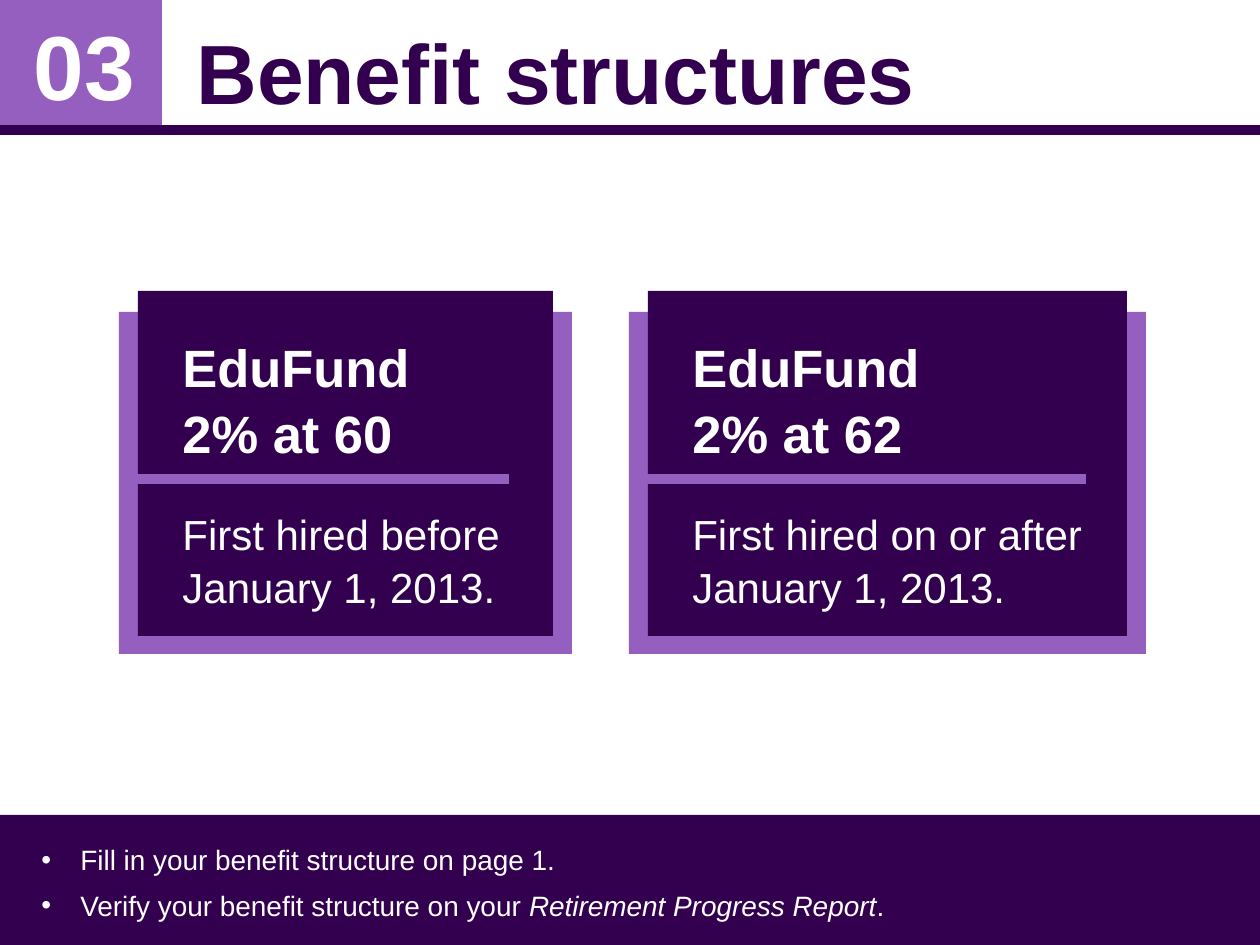
from dataclasses import dataclass

from lxml import etree
from pptx import Presentation
from pptx.dml.color import RGBColor
from pptx.enum.shapes import MSO_CONNECTOR, MSO_SHAPE
from pptx.enum.text import MSO_ANCHOR, PP_ALIGN
from pptx.oxml.ns import qn
from pptx.util import Pt

RECTANGLE = MSO_SHAPE.RECTANGLE
STRAIGHT = MSO_CONNECTOR.STRAIGHT
TOP, MIDDLE = MSO_ANCHOR.TOP, MSO_ANCHOR.MIDDLE
LEFT, CENTER = PP_ALIGN.LEFT, PP_ALIGN.CENTER

EMU_PER_PX = 914400 / 126
WIDTH, HEIGHT = 1260, 945
HEADER_HEIGHT = 130
FOOTER_TOP = 815
DARK, LIGHT, WHITE = "32004F", "945FBF", "FFFFFF"


def px(length):
    return round(length * EMU_PER_PX)


def color(value):
    return RGBColor.from_string(value)


@dataclass
class SlideBuilder:
    page: object
    font_name: str = "Arial"

    def rectangle(self, left, top, width, height, fill):
        box = self.page.shapes.add_shape(
            RECTANGLE, px(left), px(top), px(width), px(height))
        box.shadow.inherit = False
        box.fill.solid()
        box.fill.fore_color.rgb = color(fill)
        box.line.fill.background()

    def rule(self, left, right, y):
        line = self.page.shapes.add_connector(
            STRAIGHT, px(left), px(y), px(right), px(y))
        etree.SubElement(line._element.spPr, qn("a:effectLst"))
        return line

    def bar(self, left, right, y, stroke):
        line = self.rule(left, right, y)
        line.line.width = Pt(6)
        line.line.color.rgb = color(stroke)

    def bullet(self, para):
        properties = para._p.get_or_add_pPr()
        properties.set("marL", str(px(39)))
        properties.set("indent", str(px(-39)))
        etree.SubElement(properties, qn("a:buFont")).set("typeface", self.font_name)
        etree.SubElement(properties, qn("a:buChar")).set("char", "•")

    def text(self, left, top, width, height, paragraphs, anchor=TOP,
             fill=WHITE, bulleted=False, **layout):
        box = self.page.shapes.add_textbox(
            px(left), px(top), px(width), px(height))
        frame = box.text_frame
        frame.word_wrap = True
        frame.vertical_anchor = anchor
        for index, (spans, style) in enumerate(paragraphs):
            para = frame.paragraphs[0] if index == 0 else frame.add_paragraph()
            if bulleted:
                self.bullet(para)
            for name, value in layout.items():
                setattr(para, name, value)
            for position, line in enumerate(spans):
                if position and not bulleted:
                    para.add_line_break()
                words, extra = line if isinstance(line, tuple) else (line, {})
                span = para.add_run()
                span.text = words
                span.font.color.rgb = color(fill)
                values = {"name": self.font_name, **style, **extra}
                for name, value in values.items():
                    setattr(span.font, name, value)

    def card(self, left, width, rule_right, text_width, heading, detail):
        self.rectangle(left, 312, width, 342, LIGHT)
        self.rectangle(left + 19, 291, width - 38, 345, DARK)
        self.text(left + 51, 326, text_width, 285, [
            (heading, {"size": Pt(30), "bold": True}),
            ([detail], {"size": Pt(24), "bold": False}),
        ], space_after=Pt(24), line_spacing=1.05)
        self.bar(left + 17, rule_right, 479, LIGHT)


def main():
    deck = Presentation()
    deck.slide_width, deck.slide_height = px(WIDTH), px(HEIGHT)
    builder = SlideBuilder(deck.slides.add_slide(deck.slide_layouts[6]))

    builder.rectangle(0, 0, 162, HEADER_HEIGHT, LIGHT)
    builder.bar(0, WIDTH, HEADER_HEIGHT, DARK)
    builder.rectangle(0, FOOTER_TOP, WIDTH, HEIGHT - FOOTER_TOP, DARK)
    builder.text(184, 1, 1055, 129, [
        (["Benefit structures"], {"size": Pt(48), "bold": True}),
    ], anchor=MIDDLE, fill=DARK, alignment=LEFT, line_spacing=1.1)
    builder.text(21, 10, 127, 121, [
        (["03"], {"size": Pt(52), "bold": True}),
    ], anchor=MIDDLE, alignment=CENTER, line_spacing=0.9)

    cards = [
        (119, 453, 509, 382, ["EduFund", "2% at 60"],
         "First hired before January 1, 2013."),
        (629, 517, 1086, 428, ["EduFund", "2% at 62"],
         "First hired on or after January 1, 2013."),
    ]
    for card in cards:
        builder.card(*card)

    note = {"size": Pt(16)}
    builder.text(29, 835, 1208, 91, [
        (["Fill in your benefit structure on page 1."], note),
        (["Verify your benefit structure on your ",
          ("Retirement Progress Report", {"italic": True}), "."], note),
    ], bulleted=True, space_after=Pt(6), line_spacing=1.05)

    deck.save("out.pptx")


if __name__ == "__main__":
    main()
